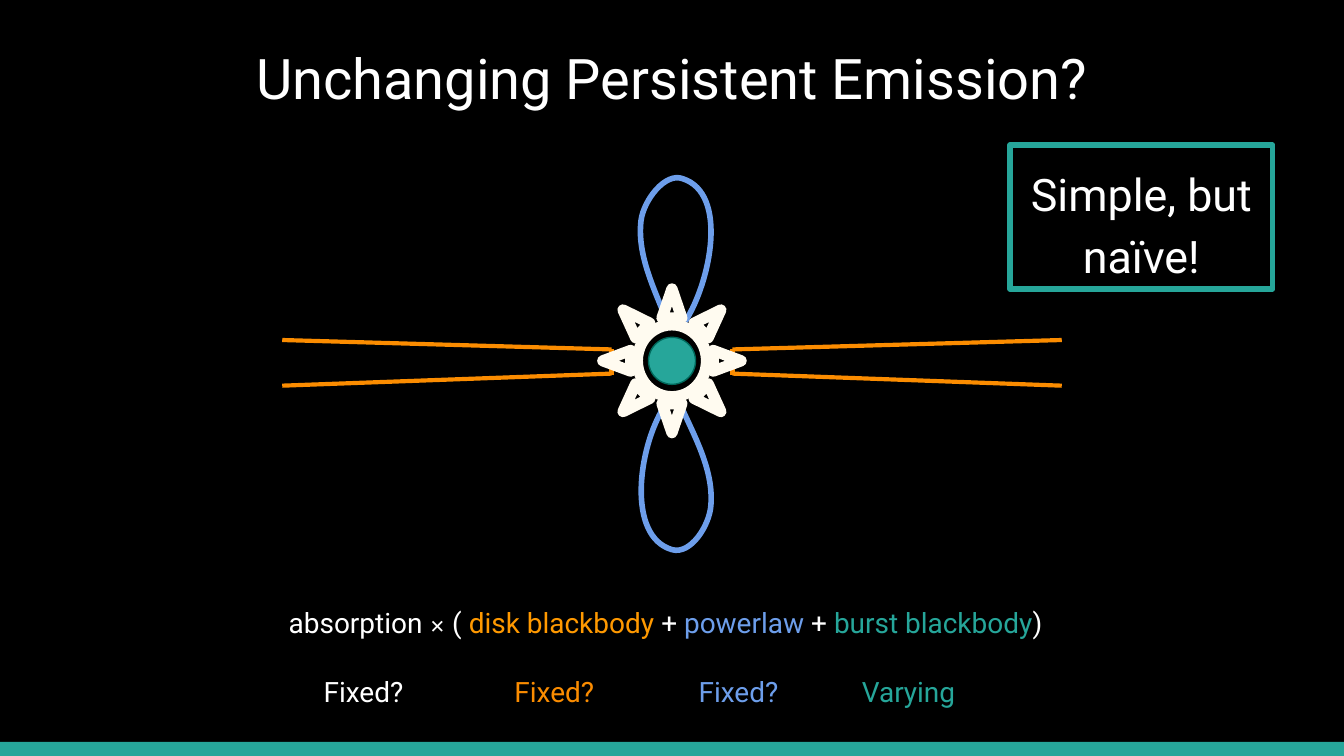
"""Build the slide about the emission model of a bursting source."""
from dataclasses import dataclass

from lxml import etree
from pptx import Presentation
from pptx.dml.color import RGBColor
from pptx.enum.shapes import MSO_CONNECTOR, MSO_SHAPE
from pptx.enum.text import MSO_ANCHOR, MSO_AUTO_SIZE, PP_ALIGN
from pptx.oxml.ns import qn
from pptx.util import Inches, Pt

STRAIGHT = MSO_CONNECTOR.STRAIGHT
RECTANGLE, ELLIPSE, SUN = MSO_SHAPE.RECTANGLE, MSO_SHAPE.OVAL, MSO_SHAPE.SUN
TOP, NO_FIT = MSO_ANCHOR.TOP, MSO_AUTO_SIZE.NONE
LEFT, CENTER = PP_ALIGN.LEFT, PP_ALIGN.CENTER
TITLE_ONLY = 5
COLUMNS, ROWS = 100, 56.25
CENTER_COLUMN = COLUMNS / 2
SIDES = ("left", "top", "width", "height")


@dataclass(frozen=True)
class Theme:
    """Colours, type sizes and line widths of the slide."""

    font: str = "Roboto"
    back: str = "000000"
    text: str = "FFFFFF"
    burst: str = "26A69A"
    burst_edge: str = "00695C"
    disk: str = "FB8C00"
    disk_text: str = "FF9900"
    powerlaw: str = "6D9EEB"
    corona: str = "FFFBF0"
    title_size: float = 30
    callout_size: float = 24
    body_size: float = 15
    sign_size: float = 10
    hairline: float = 0.75
    disk_line: float = 2.25
    bold_line: float = 3
    corona_line: float = 6


THEME = Theme()
FRAME_FORMAT = {
    "word_wrap": True, "auto_size": NO_FIT, "vertical_anchor": TOP,
    "margin_left": Inches(0.1), "margin_right": Inches(0.1),
    "margin_top": Inches(0.1), "margin_bottom": Inches(0.1),
}
LOOPS = {
    (47.7, 13.2, 5.3, 10.7): (
        (49.5, 23.6), (48.6, 21.3), (47.4, 18.9), (47.7, 16.4),
        (47.9, 14.9), (49.5, 12.8), (50.8, 13.3),
        (54.2, 14.4), (52.9, 20.9), (51, 23.9)),
    (47.7, 30.2, 5.3, 10.7): (
        (50.8, 30.5), (51.8, 32.7), (53.1, 35.1), (52.9, 37.6),
        (52.8, 39.1), (51.4, 41.3), (50, 40.9),
        (46.6, 39.9), (47.5, 33.3), (49.4, 30.3)),
}
DISK_EDGES = (((29, 25.3), (4.5, 26)), ((4.5, 27.8), (29, 28.7)), ((4.5, 26), (4.5, 27.9)))
MODEL = (
    ("absorption ", THEME.text, THEME.body_size),
    ("✕", THEME.text, THEME.sign_size),
    (" ( ", THEME.text, THEME.body_size),
    ("disk blackbody ", THEME.disk_text, THEME.body_size),
    ("+ ", THEME.text, THEME.body_size),
    ("powerlaw", THEME.powerlaw, THEME.body_size),
    (" + ", THEME.text, THEME.body_size),
    ("burst blackbody", THEME.burst, THEME.body_size),
    (")", THEME.text, THEME.body_size),
)
STATES = (
    ("Fixed?", THEME.text, 2.6),
    ("Fixed?", THEME.disk, 16.8),
    ("Fixed?", THEME.powerlaw, 30.5),
    ("Varying", THEME.burst, 42.65),
)


def grid(*cells):
    """Turn grid cells of a tenth of an inch into slide lengths."""
    return [Inches(cell / 10) for cell in cells]


def set_format(target, values):
    """Set each attribute of the target from a dict."""
    for name, value in values.items():
        setattr(target, name, value)


def set_line(line, color, width):
    """Give a line its colour and width."""
    line.color.rgb = RGBColor.from_string(color)
    line.width = Pt(width)


def style_shape(shape, fill=None, color=None, width=None):
    """Set the fill and outline of a shape and remove its shadow."""
    shape.shadow.inherit = False
    if fill:
        shape.fill.solid()
        shape.fill.fore_color.rgb = RGBColor.from_string(fill)
    else:
        shape.fill.background()
    if color:
        set_line(shape.line, color, width)
    else:
        shape.line.fill.background()


def add_preset(page, kind, cells, **style):
    """Add a styled preset shape on the grid."""
    shape = page.shapes.add_shape(kind, *grid(*cells))
    style_shape(shape, **style)
    return shape


def add_edge(page, start, end):
    """Add one straight edge of the disk."""
    edge = page.shapes.add_connector(STRAIGHT, *grid(*start, *end))
    set_line(edge.line, THEME.disk, THEME.disk_line)
    etree.SubElement(edge.element.spPr, qn("a:effectLst"))


def add_disk(page):
    """Add the right half of the disk and its mirror image."""
    for side in (1, -1):
        for ends in DISK_EDGES:
            add_edge(page, *((CENTER_COLUMN + side * offset, row) for offset, row in ends))


def add_loop(page, cells, points):
    """Add an open loop through a chain of cubic curves."""
    builder = page.shapes.build_freeform(*grid(*points[0]))
    builder.add_line_segments([grid(*point) for point in points[3::3]], close=False)
    loop = builder.convert_to_shape()
    left, top, width, height = grid(*cells)
    set_format(loop, dict(zip(SIDES, (left, top, width, height))))
    outline = loop.element.spPr.find(f".//{qn('a:path')}")
    outline.set("w", str(width))
    outline.set("h", str(height))
    for segment in list(outline):
        outline.remove(segment)
    for index, (x, y) in enumerate(grid(*point) for point in points):
        if index % 3 == 1 or index == 0:
            segment = etree.SubElement(outline, qn("a:cubicBezTo" if index else "a:moveTo"))
        etree.SubElement(segment, qn("a:pt"), x=str(x - left), y=str(y - top))
    style_shape(loop, color=THEME.powerlaw, width=THEME.bold_line)


def write_spans(para, spans, **layout):
    """Write coloured spans into a paragraph with the given layout."""
    set_format(para, layout)
    for text, color, size in spans:
        span = para.add_run()
        span.text = text
        set_format(span.font, {"name": THEME.font, "size": Pt(size)})
        span.font.color.rgb = RGBColor.from_string(color)


def add_tabs(para, columns):
    """Add left tab stops at the given grid columns."""
    tabs = etree.SubElement(para._p.get_or_add_pPr(), qn("a:tabLst"))
    for stop in grid(*columns):
        etree.SubElement(tabs, qn("a:tab"), pos=str(stop), algn="l")


def write_title(page, text):
    """Place and format the title placeholder."""
    title = page.shapes.title
    set_format(title, dict(zip(SIDES, grid(3.2, 2.25, 93.6, 6.3))))
    set_format(title.text_frame, FRAME_FORMAT)
    write_spans(title.text_frame.paragraphs[0], [(text, THEME.text, THEME.title_size)],
                alignment=CENTER)


def add_model(page):
    """Add the model formula and the state of each component."""
    frame = page.shapes.add_textbox(*grid(20.5, 43.7, 59, 9.7)).text_frame
    set_format(frame, FRAME_FORMAT)
    write_spans(frame.paragraphs[0], MODEL, alignment=LEFT, line_spacing=1.15)
    para = frame.add_paragraph()
    add_tabs(para, [column for _, _, column in STATES])
    spans = [("\t" + text, color, THEME.body_size) for text, color, _ in STATES]
    write_spans(para, spans, alignment=LEFT, line_spacing=1.15, space_before=Pt(16))


def add_callout(page, text):
    """Add the outlined remark."""
    box = add_preset(page, RECTANGLE, (75.15, 10.8, 19.55, 10.7),
                     color=THEME.burst, width=THEME.bold_line)
    set_format(box.text_frame, FRAME_FORMAT)
    write_spans(box.text_frame.paragraphs[0], [(text, THEME.text, THEME.callout_size)],
                alignment=CENTER, line_spacing=1.15)


def main():
    """Build and save the deck."""
    deck = Presentation()
    deck.slide_width, deck.slide_height = grid(COLUMNS, ROWS)
    page = deck.slides.add_slide(deck.slide_layouts[TITLE_ONLY])
    page.background.fill.solid()
    page.background.fill.fore_color.rgb = RGBColor.from_string(THEME.back)
    add_preset(page, RECTANGLE, (0, ROWS - 1.05, COLUMNS, 1.05), fill=THEME.burst)
    add_disk(page)
    write_title(page, "Unchanging Persistent Emission?")
    add_model(page)
    add_preset(page, ELLIPSE, (48.25, 25.1, 3.5, 3.5), fill=THEME.burst,
               color=THEME.burst_edge, width=THEME.hairline)
    for cells, points in LOOPS.items():
        add_loop(page, cells, points)
    add_preset(page, SUN, (44.85, 21.5, 10.3, 10.7), color=THEME.corona, width=THEME.corona_line)
    add_callout(page, "Simple, but naïve!")
    deck.save("out.pptx")


if __name__ == "__main__":
    main()
